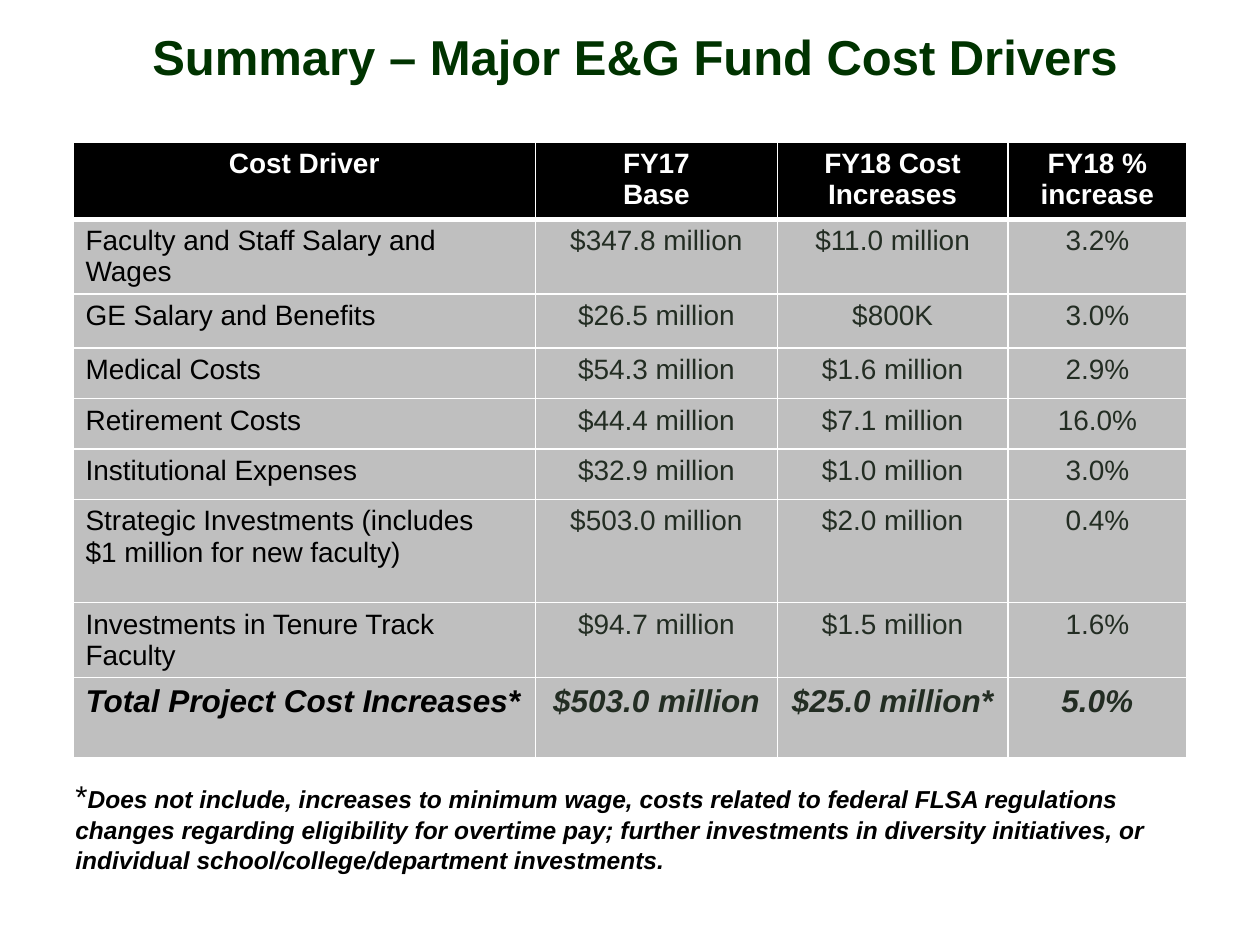
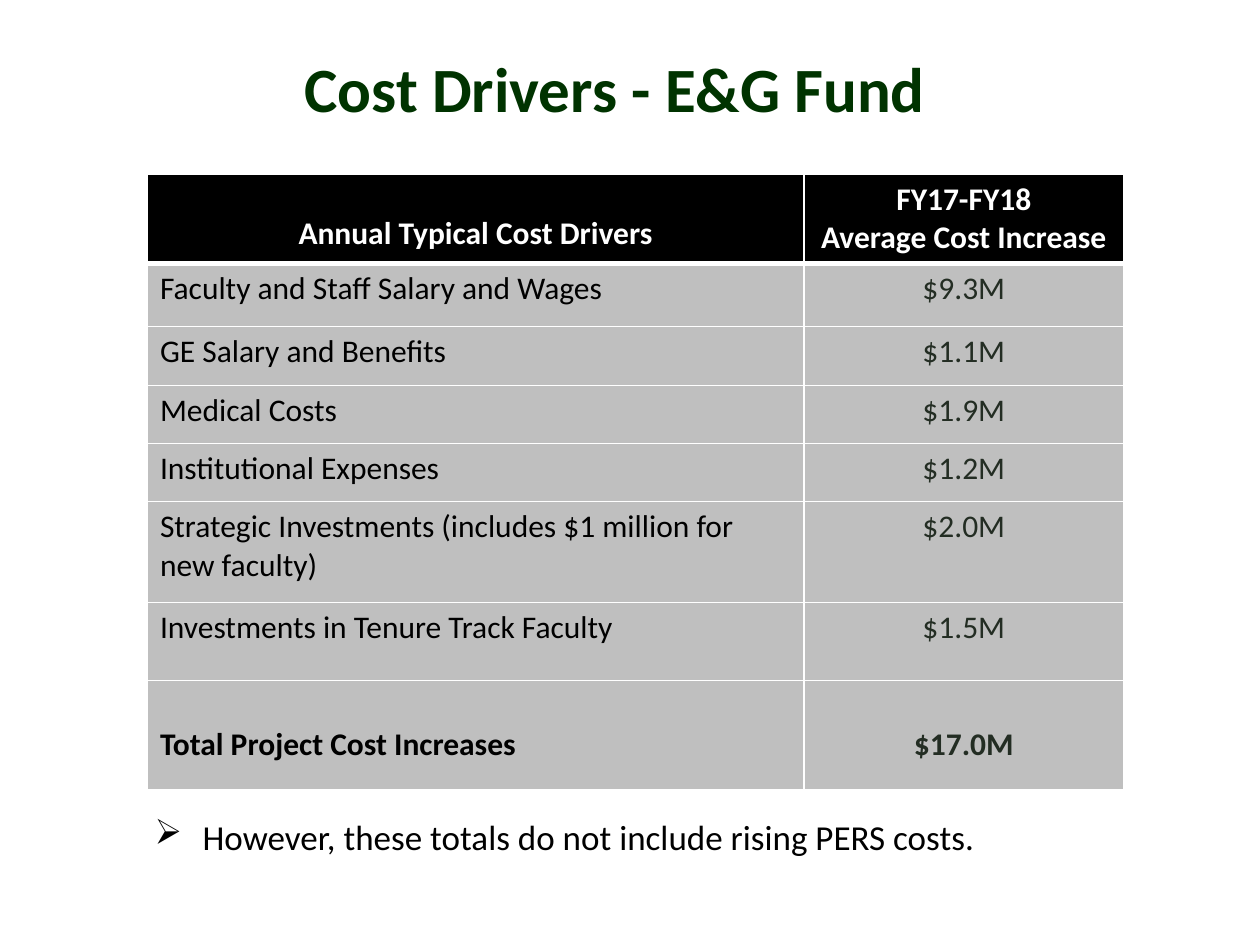
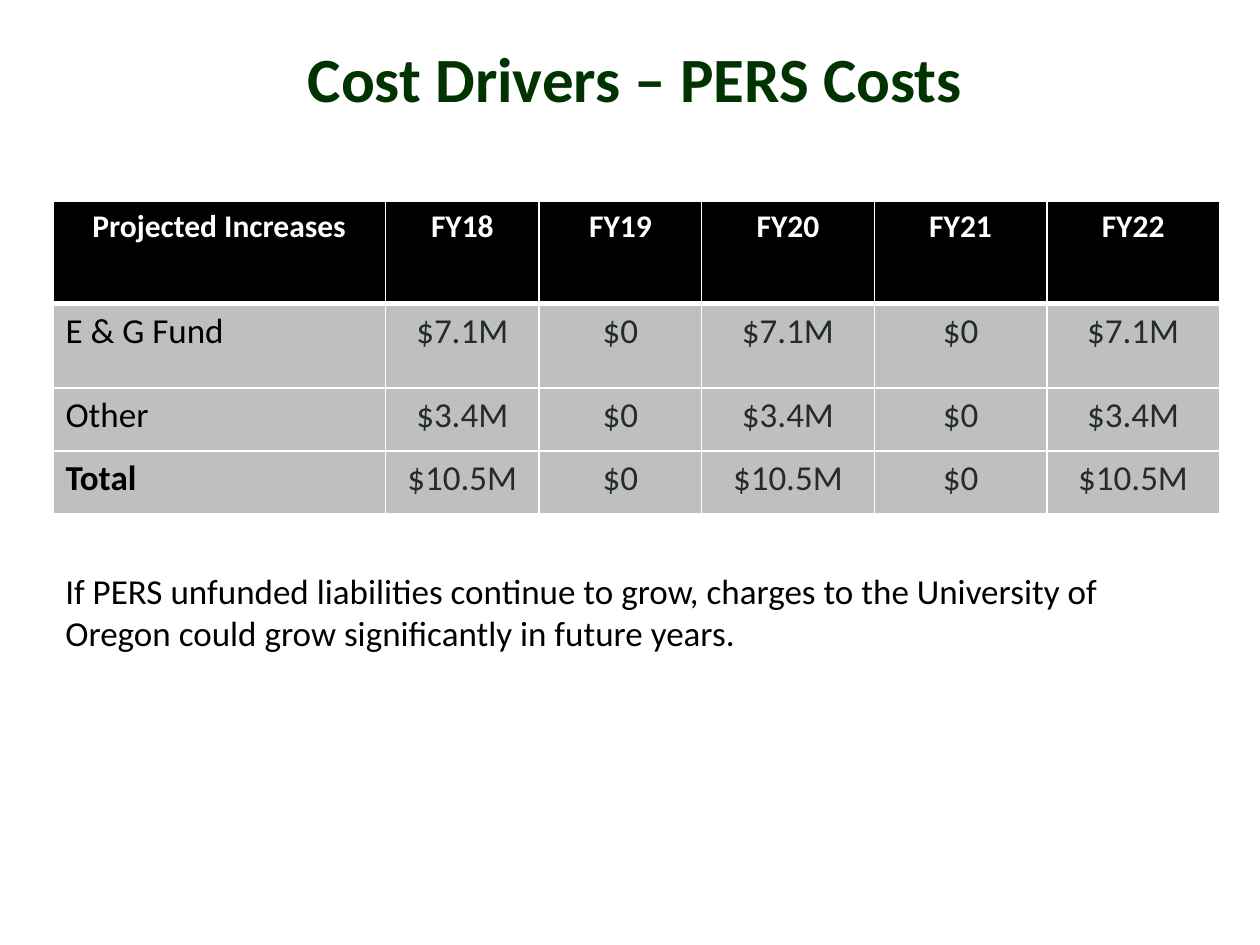
from lxml import etree
from pptx import Presentation
from pptx.dml.color import RGBColor
from pptx.enum.text import MSO_ANCHOR, PP_ALIGN
from pptx.oxml.ns import qn
from pptx.util import Inches, Pt

LEFT, CENTER = PP_ALIGN.LEFT, PP_ALIGN.CENTER
TOP, MIDDLE = MSO_ANCHOR.TOP, MSO_ANCHOR.MIDDLE

# Shared look
GREEN, BLACK, WHITE = "003300", "000000", "FFFFFF"
GREY, INK = "BFBFBF", "232D23"
SIDES = ("a:lnL", "a:lnR", "a:lnT", "a:lnB")
THIN, THICK = 1, 3
PAD = 0.05


def tint(code):
    return RGBColor.from_string(code)


def add_run(para, text, size=18, font="Calibri", color=BLACK, bold=False, slant=False):
    run = para.add_run()
    run.text = text
    face = run.font
    face.size, face.name = Pt(size), font
    face.bold, face.italic = bold, slant
    face.color.rgb = tint(color)


def write(frame, text, align=LEFT, anchor=TOP, bullet=None, **look):
    """Fill a text frame, one paragraph per line of text."""
    frame.word_wrap = True
    frame.vertical_anchor = anchor
    for i, line in enumerate(text.split("\n")):
        para = frame.add_paragraph() if i else frame.paragraphs[0]
        para.alignment = align
        if bullet:
            props = para._p.get_or_add_pPr()
            props.set("marL", str(Inches(0.38)))
            props.set("indent", str(-Inches(0.38)))
            etree.SubElement(props, qn("a:buChar")).set("char", bullet)
        add_run(para, line, **look)
    return frame.paragraphs[-1]


def add_title(deck, text, box, **look):
    slide = deck.slides.add_slide(deck.slide_layouts[5])
    title = slide.shapes.title
    title.left, title.top, title.width, title.height = map(Inches, box)
    write(title.text_frame, text, align=CENTER, anchor=MIDDLE,
          color=GREEN, bold=True, **look)
    return slide


def add_note(slide, text, box, **look):
    note = slide.shapes.add_textbox(*map(Inches, box))
    return write(note.text_frame, text, **look)


def rule_cell(cell, widths):
    """Draw the white lines around a cell."""
    props = cell._tc.get_or_add_tcPr()
    for i, (side, width) in enumerate(zip(SIDES, widths)):
        line = etree.Element(qn(side), w=str(Pt(width)))
        fill = etree.SubElement(line, qn("a:solidFill"))
        etree.SubElement(fill, qn("a:srgbClr"), val=WHITE)
        props.insert(i, line)


def add_grid(slide, rows, spot, cols, heights, head, body, total, drops=None):
    """Place a table; head, body and total hold the format of their rows,
    drops the top margins of single cells."""
    drops = drops or {}
    left, top = spot
    frame = slide.shapes.add_table(len(rows), len(cols), Inches(left), Inches(top),
                                   Inches(sum(cols)), Inches(sum(heights)))
    grid = frame.table
    for col, width in zip(grid.columns, cols):
        col.width = Inches(width)
    for row, height in zip(grid.rows, heights):
        row.height = Inches(height)
    for r, texts in enumerate(rows):
        for c, text in enumerate(texts):
            cell = grid.cell(r, c)
            cell.fill.solid()
            cell.fill.fore_color.rgb = tint(GREY if r else BLACK)
            rule_cell(cell, (THIN, THIN, THICK if r == 1 else THIN,
                             THIN if r else THICK))
            cell.margin_top = Inches(drops.get((r, c), PAD))
            if r == 0:
                look = dict(head, color=WHITE, bold=True, align=CENTER)
            else:
                look = dict(total if r == len(rows) - 1 else body)
                look.update(color=INK if c else BLACK, align=CENTER if c else LEFT)
            write(cell.text_frame, text, **look)
    return grid


def add_summary(deck):
    slide = add_title(deck, "Summary – Major E&G Fund Cost Drivers",
                      (0.33, 0, 9.42, 0.88), size=28, font="Arial")
    rows = [
        ("Cost Driver", "FY17\nBase", "FY18 Cost Increases", "FY18 %\nincrease"),
        ("Faculty and Staff Salary and Wages", "$347.8 million", "$11.0 million", "3.2%"),
        ("GE Salary and Benefits", "$26.5 million", "$800K", "3.0%"),
        ("Medical Costs", "$54.3 million", "$1.6 million", "2.9%"),
        ("Retirement Costs", "$44.4 million", "$7.1 million", "16.0%"),
        ("Institutional Expenses", "$32.9 million", "$1.0 million", "3.0%"),
        ("Strategic Investments (includes\n$1 million for new faculty)",
         "$503.0 million", "$2.0 million", "0.4%"),
        ("Investments in Tenure Track Faculty", "$94.7 million", "$1.5 million", "1.6%"),
        ("Total Project Cost Increases*", "$503.0 million", "$25.0 million*", "5.0%"),
    ]
    plain = dict(size=16, font="Arial")
    add_grid(slide, rows, (0.58, 1.13), (3.67, 1.92, 1.83, 1.42),
             (0.61, 0.58, 0.43, 0.4, 0.4, 0.4, 0.82, 0.58, 0.64),
             head=plain, body=plain,
             total=dict(size=18, font="Arial", bold=True, slant=True))
    para = add_note(slide, "*", (0.5, 6.12, 9.27, 0.88), font="Arial")
    add_run(para, "Does not include, increases to minimum wage, costs related to federal "
            "FLSA regulations changes regarding eligibility for overtime pay; further "
            "investments in diversity initiatives, or individual "
            "school/college/department investments.",
            size=14, font="Arial", bold=True, slant=True)


def add_fund(deck):
    slide = add_title(deck, "Cost Drivers - E&G Fund", (0.17, 0.08, 9.42, 1.22), size=36)
    rows = [
        ("Annual Typical Cost Drivers", "FY17-FY18\nAverage Cost Increase"),
        ("Faculty and Staff Salary and Wages", "$9.3M"),
        ("GE Salary and Benefits", "$1.1M"),
        ("Medical Costs", "$1.9M"),
        ("Institutional Expenses", "$1.2M"),
        ("Strategic Investments (includes $1 million for new faculty)", "$2.0M"),
        ("Investments in Tenure Track Faculty", "$1.5M"),
        ("Total Project Cost Increases", "$17.0M"),
    ]
    plain = dict(size=18)
    last = len(rows) - 1
    add_grid(slide, rows, (1.17, 1.38), (5.21, 2.54),
             (0.7, 0.5, 0.47, 0.46, 0.46, 0.8, 0.62, 0.87),
             head=plain, body=plain, total=dict(size=18, bold=True),
             drops={(0, 0): 0.32, (last, 0): 0.36, (last, 1): 0.36})
    add_note(slide, "However, these totals do not include rising PERS costs.",
             (1.13, 6.42, 8.5, 0.44), size=20, bullet="➢")


def add_pers(deck):
    slide = add_title(deck, "Cost Drivers – PERS Costs", (0.33, 0, 9.42, 1.22), size=36)
    rows = [
        ("Projected Increases", "FY18", "FY19", "FY20", "FY21", "FY22"),
        ("E & G Fund", "$7.1M", "$0", "$7.1M", "$0", "$7.1M"),
        ("Other", "$3.4M", "$0", "$3.4M", "$0", "$3.4M"),
        ("Total", "$10.5M", "$0", "$10.5M", "$0", "$10.5M"),
    ]
    plain = dict(size=20)
    grid = add_grid(slide, rows, (0.42, 1.6), (2.64, 1.22, 1.29, 1.37, 1.37, 1.37),
                    (0.81, 0.67, 0.5, 0.5), head=dict(size=18), body=plain, total=plain)
    label = grid.cell(len(rows) - 1, 0).text_frame.paragraphs[0]
    label.runs[0].font.bold = True
    add_note(slide, "If PERS unfunded liabilities continue to grow, charges to the "
             "University of Oregon could grow significantly in future years.",
             (0.42, 4.47, 9.08, 0.77), size=20)


def main():
    deck = Presentation()
    deck.slide_width, deck.slide_height = Inches(10), Inches(7.5)
    add_summary(deck)
    add_fund(deck)
    add_pers(deck)
    deck.save("out.pptx")


if __name__ == "__main__":
    main()
